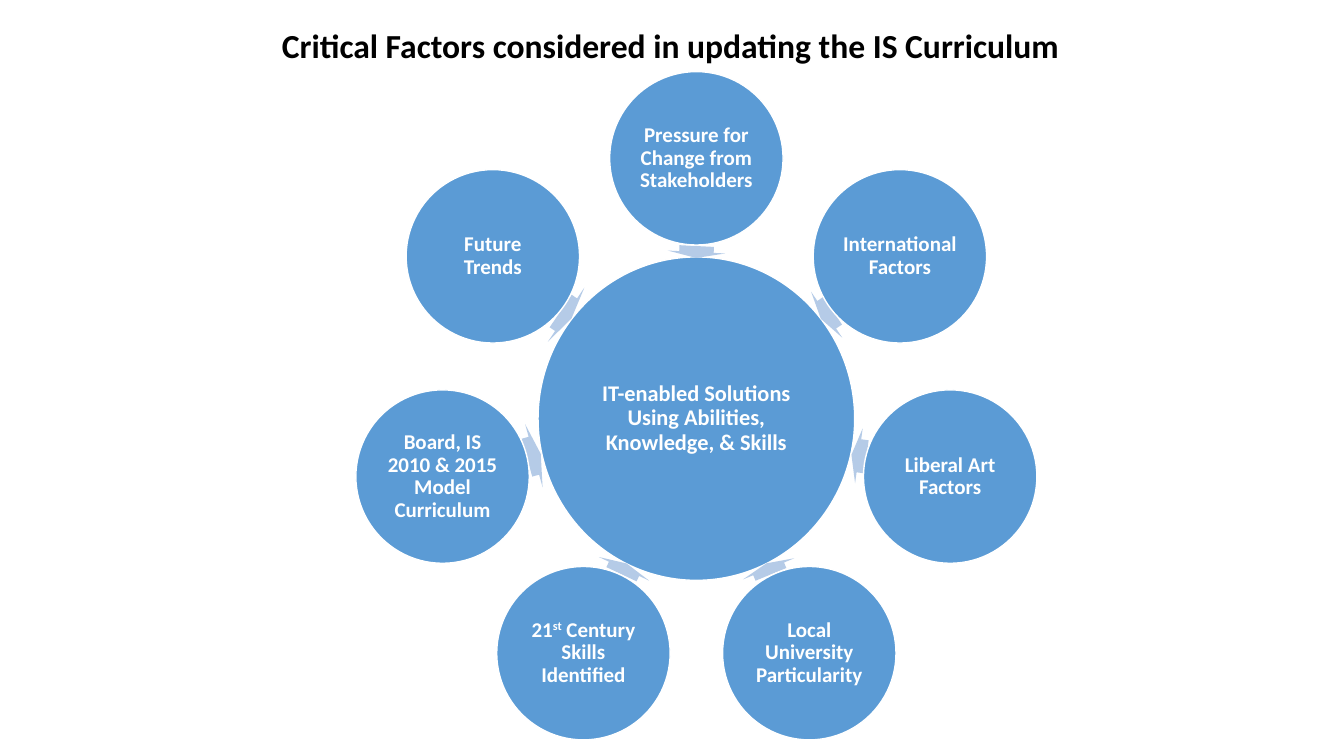
from dataclasses import dataclass
from math import cos, radians, sin

from pptx import Presentation
from pptx import util as u
from pptx.dml import color as c
from pptx.enum import shapes, text
from pptx.util import Cm


@dataclass(frozen=True)
class Theme:
    font: str = "Calibri"
    disc: str = "5B9BD5"
    edge: str = "FFFFFF"
    arrow: str = "B5CBE7"
    label: str = "FFFFFF"
    title: str = "000000"
    title_size: int = 24
    hub_size: int = 16
    disc_size: int = 15


THEME = Theme()

# Layout in centimetres
HUB_X, HUB_Y = 17.55, 10.55
HUB_W, HUB_H = 7.98, 8.15
DISC = 4.37
RING = 6.56
ARROW_RING = 4.2

# Label (superscript between ^ marks), arrow length, arrow height, arrow angle
FACTORS = [
    ("Pressure for Change from Stakeholders", 0.3, 1.45, 92.9),
    ("International Factors", 0.36, 1.4, 145.8),
    ("Liberal Art Factors", 0.38, 1.4, 187.9),
    ("Local University Particularity", 0.3, 1.4, 247.6),
    ("21^st^ Century Skills Identified", 0.3, 1.4, 295.2),
    ("Board, IS 2010 & 2015 Model Curriculum", 0.36, 1.65, 344.5),
    ("Future Trends", 0.33, 1.65, 34),
]


def rgb(code):
    return c.RGBColor.from_string(code)


def style(para, size, tint):
    para.alignment = text.PP_ALIGN.CENTER
    for run in para.runs:
        run.font.name = THEME.font
        run.font.size = u.Pt(size)
        run.font.bold = True
        run.font.color.rgb = rgb(tint)


def add_title(slide, words):
    title = slide.shapes.title
    title.left, title.top = Cm(6.32), Cm(0.51)
    title.width, title.height = Cm(21.16), Cm(1.27)
    title.text_frame.text = words
    style(title.text_frame.paragraphs[0], THEME.title_size, THEME.title)


def add_shape(group, kind, x, y, width, height, fill):
    """Add a filled shape centred on x, y."""
    shape = group.shapes.add_shape(
        kind, Cm(x - width / 2), Cm(y - height / 2), Cm(width), Cm(height))
    shape.shadow.inherit = False
    shape.fill.solid()
    shape.fill.fore_color.rgb = rgb(fill)
    return shape


def add_disc(group, x, y, width, height, label, size):
    disc = add_shape(group, shapes.MSO_SHAPE.OVAL, x, y, width, height, THEME.disc)
    disc.line.color.rgb = rgb(THEME.edge)
    disc.line.width = u.Pt(1)
    frame = disc.text_frame
    frame.word_wrap = True
    frame.vertical_anchor = text.MSO_ANCHOR.MIDDLE
    frame.margin_left = frame.margin_right = Cm(0.06)
    frame.margin_top = frame.margin_bottom = Cm(0.06)
    para = frame.paragraphs[0]
    para.line_spacing = 0.9
    for i, part in enumerate(label.split("^")):
        run = para.add_run()
        run.text = part
        if i % 2:
            run.font._element.set("baseline", "30000")
    style(para, size, THEME.label)


def add_arrow(group, x, y, width, height, angle):
    arrow = add_shape(group, shapes.MSO_SHAPE.RIGHT_ARROW, x, y, width, height, THEME.arrow)
    arrow.line.fill.background()
    arrow.adjustments[0], arrow.adjustments[1] = 0.6, 0.5
    arrow.rotation = angle


def main():
    deck = Presentation()
    deck.slide_width, deck.slide_height = Cm(33.87), Cm(19.05)
    slide = deck.slides.add_slide(deck.slide_layouts[5])

    # Hub
    group = slide.shapes.add_group_shape()
    add_disc(group, HUB_X, HUB_Y, HUB_W, HUB_H,
             "IT-enabled Solutions Using Abilities, Knowledge, & Skills", THEME.hub_size)

    # Ring of factors, clockwise from the top
    for i, (label, width, height, angle) in enumerate(FACTORS):
        turn = radians(360 / len(FACTORS) * i)
        dx, dy = sin(turn), -cos(turn)
        add_arrow(group, HUB_X + ARROW_RING * dx, HUB_Y + ARROW_RING * dy,
                  width, height, angle)
        add_disc(group, HUB_X + RING * dx, HUB_Y + RING * dy, DISC, DISC,
                 label, THEME.disc_size)

    add_title(slide, "Critical Factors considered in updating the IS Curriculum")
    deck.save("out.pptx")


if __name__ == "__main__":
    main()
